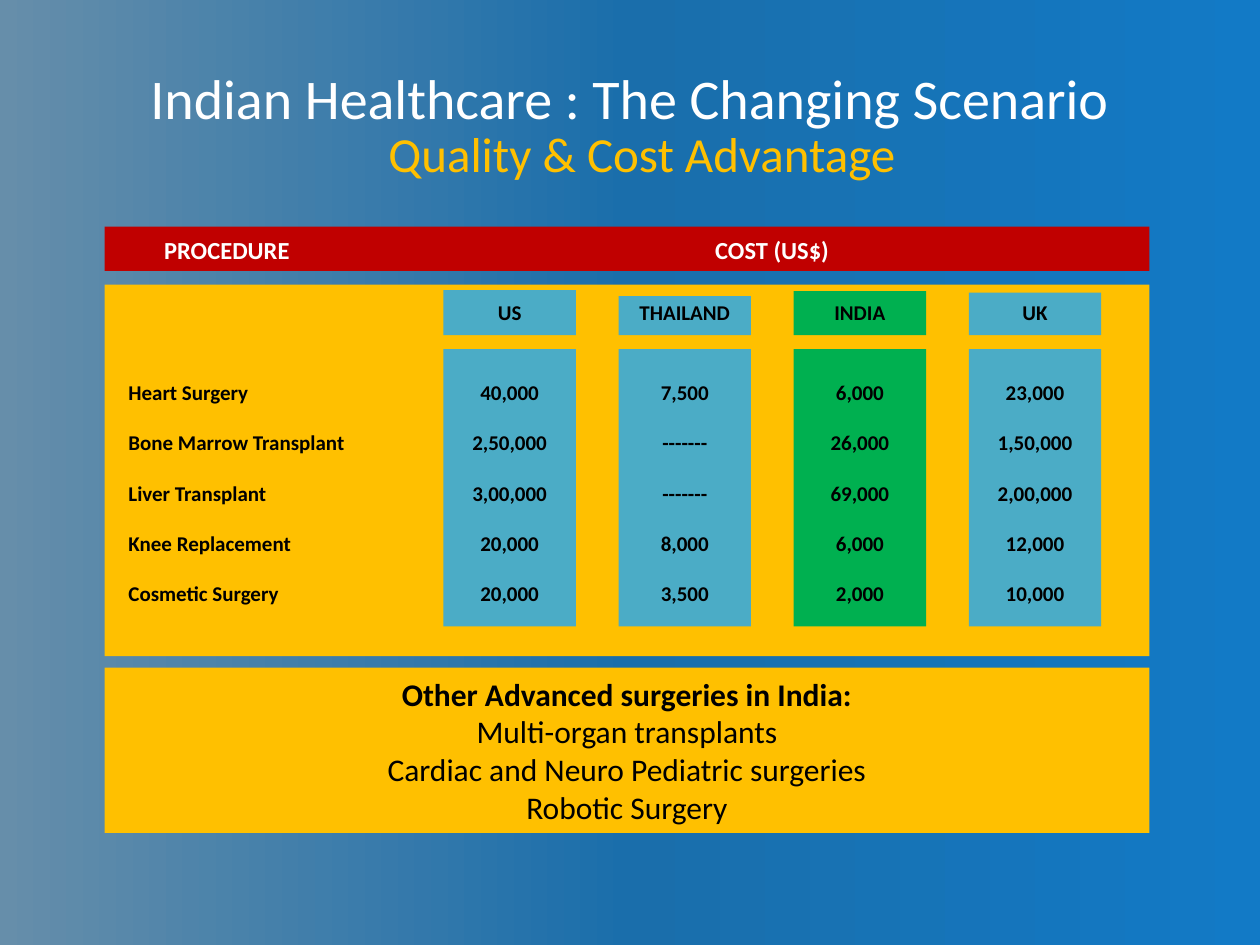
"""Builds a slide that compares surgery costs across four countries."""
from copy import deepcopy

from pptx import Presentation, util as u
from pptx.dml.color import RGBColor
from pptx.enum import shapes, text

COLOURS = {
    "amber": "FFC000", "red": "C00000", "teal": "4BACC6", "green": "00B050",
    "white": "FFFFFF", "black": "000000",
    "steel": "668EAA", "blue": "1A6EAB", "azure": "127AC6",
}
PROCEDURES = ["Heart Surgery", "Bone Marrow Transplant", "Liver Transplant",
              "Knee Replacement", "Cosmetic Surgery"]
COUNTRIES = [
    ("US", "teal", 0.91, 0.58, 1.52, ["40,000", "2,50,000", "3,00,000", "20,000", "20,000"]),
    ("THAILAND", "teal", 0.79, 2.21, 0.99, ["7,500", "-------", "-------", "8,000", "3,500"]),
    ("INDIA", "green", 0.89, 1.17, 1.19, ["6,000", "26,000", "69,000", "6,000", "2,000"]),
    ("UK", "teal", 0.86, 0.61, 1.52, ["23,000", "1,50,000", "2,00,000", "12,000", "10,000"]),
]
SURGERIES = ["Other Advanced surgeries in India:", "Multi-organ transplants",
             "Cardiac and Neuro Pediatric surgeries", "Robotic Surgery"]
PANEL_LEFT, PANEL_WIDTH = 2.11, 21.06
COLUMN_LEFT, COLUMN_PITCH, COLUMN_WIDTH = 8.94, 3.53, 2.67
HEADER_BOTTOM, COLUMN_TOP, COLUMN_HEIGHT = 6.76, 7.04, 5.59
LABEL_TOP, VALUES_TOP = 6.07, 7.14


def colour(name):
    """Return the palette colour with this name."""
    return RGBColor.from_string(COLOURS[name])


class SlideBuilder:
    """Holds the text style and the current slide."""

    style = {"name": "Calibri", "size": u.Pt(12), "bold": True}

    def __init__(self, slide):
        """Start building on a slide."""
        self.slide = slide

    def background(self, names):
        """Fill the slide from left to right through three colours."""
        fill = self.slide.background.fill
        fill.gradient()
        fill.gradient_angle = 0
        first = fill.gradient_stops[0]._gs
        first.addnext(deepcopy(first))
        for index, name in enumerate(names):
            stop = fill.gradient_stops[index]
            stop.position = index / (len(names) - 1)
            stop.color.rgb = colour(name)

    def set_text(self, shape, lines, ink="black", align="CENTER", spacing=1.0, **changes):
        """Put one paragraph per line into a shape."""
        frame = shape.text_frame
        frame.text = "\n".join(lines)
        for paragraph in frame.paragraphs:
            paragraph.alignment = text.PP_ALIGN[align]
            paragraph.line_spacing = spacing
            for key, value in {**self.style, **changes}.items():
                setattr(paragraph.font, key, value)
            paragraph.font.color.rgb = colour(ink)

    def title(self, wording, left, top, width, height):
        """Place and format the title placeholder."""
        shape = self.slide.shapes.title
        places = {"left": left, "top": top, "width": width, "height": height}
        for key, value in places.items():
            setattr(shape, key, u.Cm(value))
        shape.text_frame.vertical_anchor = text.MSO_ANCHOR.MIDDLE
        self.set_text(shape, [wording], "white", size=u.Pt(32), bold=False)

    def panel(self, fill, *place):
        """Add a plain filled rectangle."""
        shape = self.slide.shapes.add_shape(
            shapes.MSO_SHAPE.RECTANGLE, *map(u.Cm, place))
        shape.shadow.inherit = False
        shape.fill.solid()
        shape.fill.fore_color.rgb = colour(fill)
        shape.line.fill.background()
        return shape

    def label(self, lines, place, wrap=False, **changes):
        """Add a text box without margins."""
        shape = self.slide.shapes.add_textbox(*map(u.Cm, place))
        frame = shape.text_frame
        frame.word_wrap = wrap
        for side in ("left", "top", "right", "bottom"):
            setattr(frame, f"margin_{side}", 0)
        self.set_text(shape, lines, **changes)
        return shape

    def country(self, index, name, fill, header_height, label_width, values_width, values):
        """Add one country column with its header and costs."""
        left = COLUMN_LEFT + index * COLUMN_PITCH
        centre = left + COLUMN_WIDTH / 2
        self.panel(fill, left, HEADER_BOTTOM - header_height, COLUMN_WIDTH, header_height)
        self.panel(fill, left, COLUMN_TOP, COLUMN_WIDTH, COLUMN_HEIGHT)
        self.label([name], (centre - label_width / 2, LABEL_TOP, label_width, 0.48),
                   spacing=0.95)
        self.label(values, (centre - values_width / 2, VALUES_TOP, values_width, 5.13),
                   spacing=2.0)


def main():
    """Build and save the presentation."""
    presentation = Presentation()
    presentation.slide_width, presentation.slide_height = u.Cm(25.4), u.Cm(19.05)
    builder = SlideBuilder(presentation.slides.add_slide(presentation.slide_layouts[5]))
    builder.background(["steel", "blue", "azure"])
    builder.title("Indian Healthcare : The Changing Scenario", 1.27, 0.76, 22.86, 2.41)
    subtitle = builder.label(["Quality & Cost Advantage"], (5.36, 2.36, 15.16, 1.45),
                             wrap=True, ink="amber", size=u.Pt(28), bold=False)
    subtitle.text_frame.margin_top = subtitle.text_frame.margin_bottom = u.Cm(0.13)

    builder.panel("amber", PANEL_LEFT, 5.74, PANEL_WIDTH, 7.49)
    builder.panel("red", PANEL_LEFT, 4.57, PANEL_WIDTH, 0.89)
    for heading, left, width in [("PROCEDURE", 3, 3.15), ("COST (US$)", 14.17, 2.79)]:
        builder.label([heading], (left, 4.78, width, 0.56), ink="white",
                      spacing=0.95, size=u.Pt(14))
    builder.label(PROCEDURES, (2.59, VALUES_TOP, 5.33, 6.1), wrap=True,
                  align="LEFT", spacing=2.0)
    for index, country in enumerate(COUNTRIES):
        builder.country(index, *country)

    surgeries = builder.panel("amber", PANEL_LEFT, 13.46, PANEL_WIDTH, 3.33)
    builder.set_text(surgeries, SURGERIES, size=u.Pt(18), bold=False)
    surgeries.text_frame.paragraphs[0].font.bold = True
    presentation.save("out.pptx")


if __name__ == "__main__":
    main()
